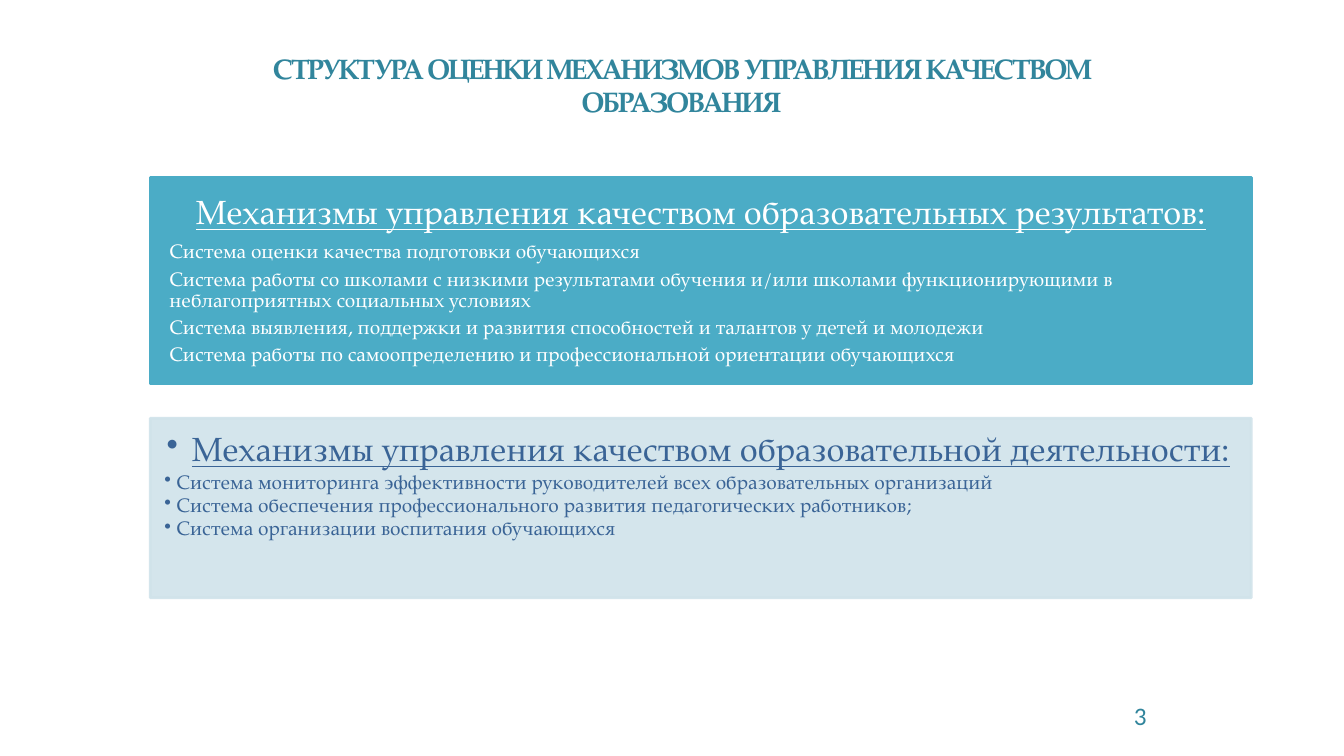
import pptx
import pptx.util
import pptx.dml.color
import pptx.enum.shapes
import pptx.enum.text
import pptx.oxml.ns
from lxml import etree

Inches = pptx.util.Inches
Pt = pptx.util.Pt
ALIGN = pptx.enum.text.PP_ALIGN
ANCHOR = pptx.enum.text.MSO_ANCHOR
SERIF = "TeX Gyre Pagella"
TEAL = "31859C"


def color(hex_string):
    return pptx.dml.color.RGBColor.from_string(hex_string)


def add_run(paragraph, text, size, hex_string, font_name=SERIF):
    run = paragraph.add_run()
    run.text = text
    run.font.size = Pt(size)
    run.font.name = font_name
    run.font.color.rgb = color(hex_string)
    return run


presentation = pptx.Presentation()
presentation.slide_width = Inches(13.33)
presentation.slide_height = Inches(7.5)
slide = presentation.slides.add_slide(presentation.slide_layouts[5])

# Title
title = slide.shapes.title
title.left, title.top = Inches(2.28), Inches(0.33)
title.width, title.height = Inches(8.95), Inches(1.02)
title.text_frame.vertical_anchor = ANCHOR.MIDDLE
title_paragraph = title.text_frame.paragraphs[0]
title_paragraph.alignment = ALIGN.CENTER
title_run = add_run(
    title_paragraph,
    "СТРУКТУРА ОЦЕНКИ МЕХАНИЗМОВ УПРАВЛЕНИЯ КАЧЕСТВОМ ОБРАЗОВАНИЯ", 20, TEAL)
title_run.font.bold = True
title_run.font._element.set("spc", "-100")

# Panels: a heading followed by the systems it covers
panels = [
    {
        "top": 1.76, "height": 2.05, "fill": "4BACC6", "opacity": 100,
        "text_color": "FFFFFF", "anchor": ANCHOR.MIDDLE,
        "insets": (0.19, 0.11, 0.19, 0.11), "spacing": 0.31, "bullets": False,
        "heading": "Механизмы управления качеством образовательных результатов:",
        "systems": [
            "Система оценки качества подготовки обучающихся",
            "Система работы со школами с низкими результатами обучения и/или "
            "школами функционирующими в неблагоприятных социальных условиях",
            "Система выявления, поддержки и развития способностей и талантов "
            "у детей и молодежи",
            "Система работы по самоопределению и профессиональной ориентации "
            "обучающихся",
        ],
    },
    {
        "top": 4.15, "height": 1.78, "fill": "D0E3EA", "opacity": 90,
        "text_color": "3A6496", "anchor": ANCHOR.TOP,
        "insets": (0.14, 0.14, 0.19, 0.21), "spacing": 0.11, "bullets": True,
        "heading": "Механизмы управления качеством образовательной деятельности:",
        "systems": [
            "Система мониторинга эффективности руководителей всех "
            "образовательных организаций",
            "Система обеспечения профессионального развития педагогических "
            "работников;",
            "Система организации воспитания обучающихся",
        ],
    },
]

for panel in panels:
    shape = slide.shapes.add_shape(
        pptx.enum.shapes.MSO_SHAPE.RECTANGLE, Inches(1.49), Inches(panel["top"]),
        Inches(10.92), Inches(panel["height"]))
    shape.shadow.inherit = False
    shape.fill.solid()
    shape.fill.fore_color.rgb = color(panel["fill"])
    shape.line.color.rgb = color(panel["fill"])
    shape.line.width = Pt(2)
    if panel["opacity"] < 100:
        properties = shape._element.spPr
        for fill_color in properties.iter(pptx.oxml.ns.qn("a:srgbClr")):
            alpha = etree.SubElement(fill_color, pptx.oxml.ns.qn("a:alpha"))
            alpha.set("val", str(panel["opacity"] * 1000))

    frame = shape.text_frame
    frame.word_wrap = True
    frame.vertical_anchor = panel["anchor"]
    (frame.margin_left, frame.margin_top,
     frame.margin_right, frame.margin_bottom) = map(Inches, panel["insets"])

    for index, text in enumerate([panel["heading"]] + panel["systems"]):
        is_heading = index == 0
        size = 24 if is_heading else 14
        paragraph = frame.paragraphs[0] if is_heading else frame.add_paragraph()
        paragraph.alignment = ALIGN.CENTER if is_heading else ALIGN.LEFT
        paragraph.line_spacing = 0.9
        paragraph.space_after = Pt(round(size * panel["spacing"], 1))
        if panel["bullets"]:
            indent = Inches(0.25 if is_heading else 0.12)
            paragraph_properties = paragraph._p.get_or_add_pPr()
            paragraph_properties.set("marL", str(indent))
            paragraph_properties.set("indent", str(-indent))
            bullet = etree.SubElement(
                paragraph_properties, pptx.oxml.ns.qn("a:buChar"))
            bullet.set("char", "•")
        run = add_run(paragraph, text, size, panel["text_color"])
        run.font.underline = is_heading

# Slide number
number_box = slide.shapes.add_textbox(
    Inches(9.14), Inches(6.9), Inches(2.33), Inches(0.4))
number_box.text_frame.word_wrap = True
number_box.text_frame.vertical_anchor = ANCHOR.MIDDLE
number_paragraph = number_box.text_frame.paragraphs[0]
number_paragraph.alignment = ALIGN.RIGHT
add_run(number_paragraph, "3", 18, TEAL, "Calibri")

presentation.save("out.pptx")
